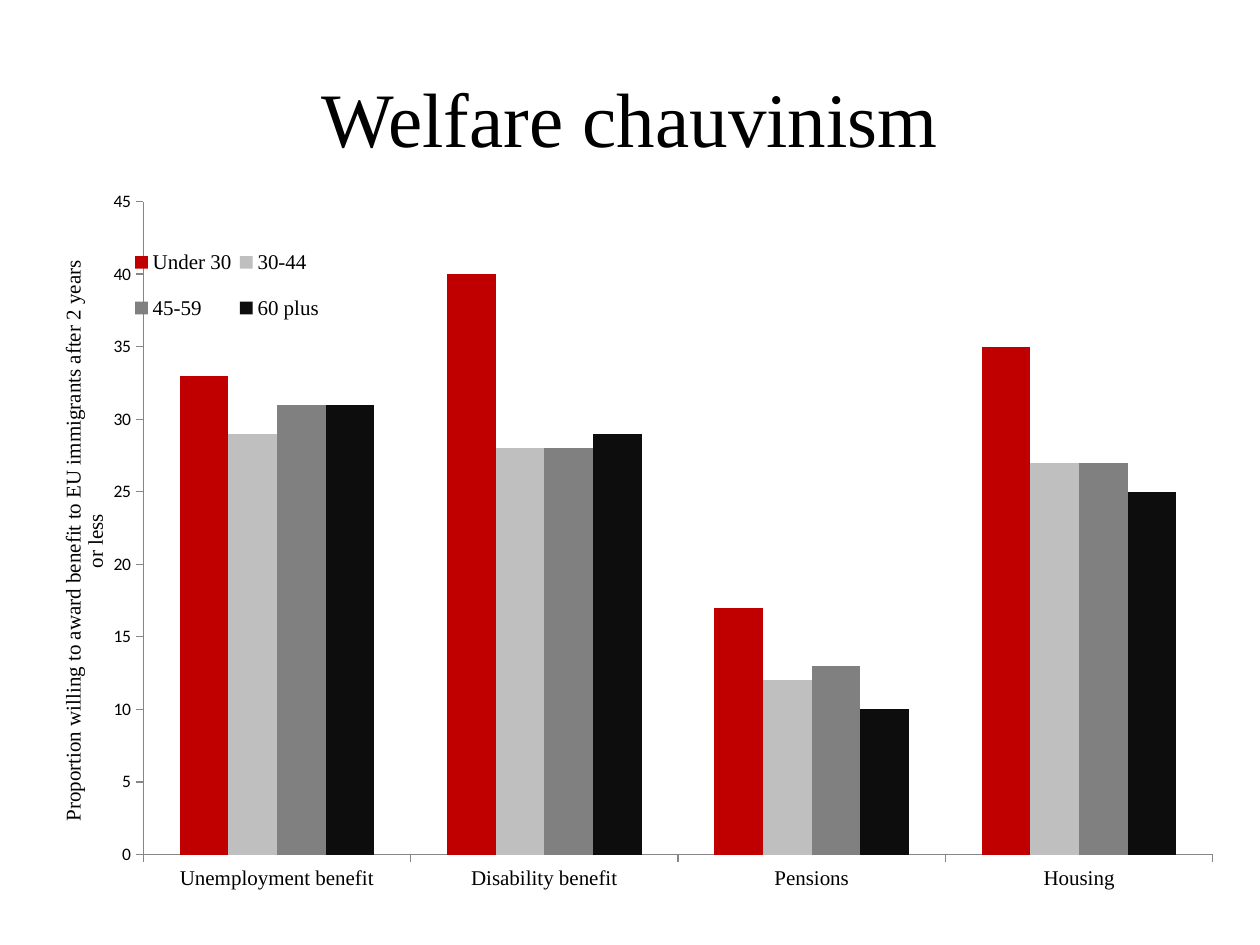
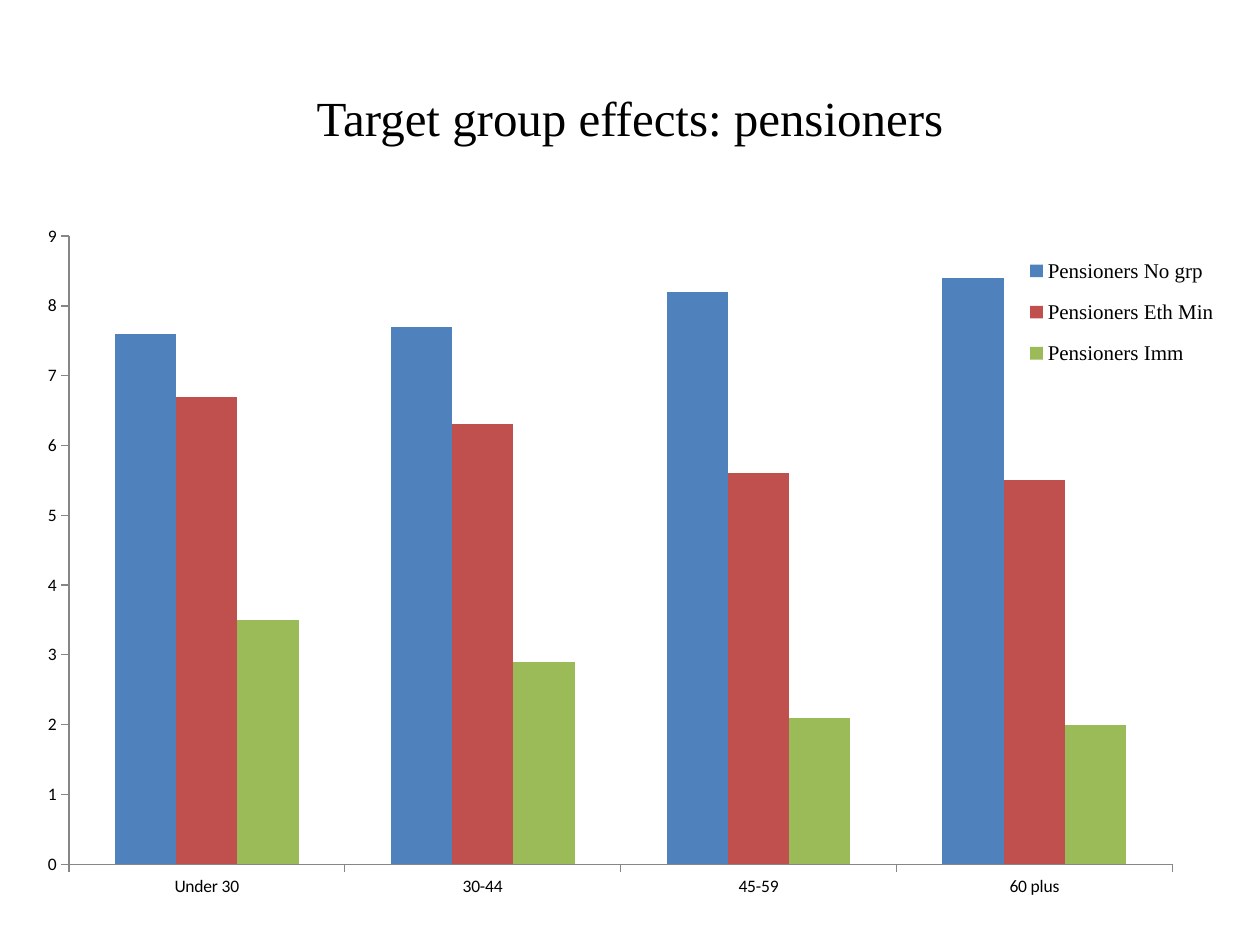
"""Build two slides of clustered column charts about welfare attitudes."""
from lxml.etree import SubElement
from pptx import Presentation
from pptx.chart.data import CategoryChartData
from pptx.dml.color import RGBColor
from pptx.enum.chart import XL_CHART_TYPE as ChartType
from pptx.enum.chart import XL_LEGEND_POSITION as LegendPosition
from pptx.enum.chart import XL_TICK_MARK as TickMark
from pptx.enum.text import MSO_ANCHOR as Anchor
from pptx.enum.text import PP_ALIGN as Align
from pptx.oxml.ns import qn
from pptx.util import Inches, Pt

BLACK = RGBColor(0x00, 0x00, 0x00)
AXIS_GREY = RGBColor(0x86, 0x86, 0x86)
DARK_RED = RGBColor(0xC0, 0x00, 0x00)
LIGHT_GREY = RGBColor(0xBF, 0xBF, 0xBF)
MID_GREY = RGBColor(0x80, 0x80, 0x80)
NEAR_BLACK = RGBColor(0x0D, 0x0D, 0x0D)
BLUE = RGBColor(0x4F, 0x81, 0xBD)
RED = RGBColor(0xC0, 0x50, 0x4D)
GREEN = RGBColor(0x9B, 0xBB, 0x59)

SERIF = "Times New Roman"
CHART_TEXT = {"name": "Calibri", "size": Pt(10), "bold": False}
LABEL_TEXT = {"name": SERIF, "size": Pt(12), "bold": False}
AXIS_FORMAT = {
    "major_tick_mark": TickMark.OUTSIDE,
    "minor_tick_mark": TickMark.NONE,
    "has_major_gridlines": False,
}
TITLE_BOX = (0.5, 0.3, 9, 1.25)
AGE_GROUPS = ["Under 30", "30-44", "45-59", "60 plus"]
BENEFITS = ["Unemployment benefit", "Disability benefit", "Pensions", "Housing"]
BENEFIT_SERIES = [
    (AGE_GROUPS[0], (33, 40, 17, 35), DARK_RED),
    (AGE_GROUPS[1], (29, 28, 12, 27), LIGHT_GREY),
    (AGE_GROUPS[2], (31, 28, 13, 27), MID_GREY),
    (AGE_GROUPS[3], (31, 29, 10, 25), NEAR_BLACK),
]
PENSIONER_SERIES = [
    ("Pensioners No grp", (7.6, 7.7, 8.2, 8.4), BLUE),
    ("Pensioners Eth Min", (6.7, 6.3, 5.6, 5.5), RED),
    ("Pensioners Imm", (3.5, 2.9, 2.1, 2), GREEN),
]


def set_format(target, values):
    """Set each named attribute of the target."""
    for name, value in values.items():
        setattr(target, name, value)


def set_font(font, values):
    """Apply font values in black."""
    set_format(font, values)
    font.color.rgb = BLACK


def set_layout(element, index, fractions, inner=False):
    """Place a chart part at fractions (x, y and maybe w, h) of the chart."""
    for old in element.findall(qn("c:layout")):
        element.remove(old)
    layout = SubElement(element, qn("c:layout"))
    element.insert(index, layout)
    manual = SubElement(layout, qn("c:manualLayout"))
    sides = "xywh"[:len(fractions)]
    settings = [("layoutTarget", "inner")] if inner else []
    settings += [(f"{side}Mode", "edge") for side in sides if side in "xy"]
    settings += zip(sides, fractions)
    for name, value in settings:
        SubElement(manual, qn(f"c:{name}")).set("val", str(value))


def add_titled_slide(deck, title, size):
    """Add a slide with a centred serif title."""
    page = deck.slides.add_slide(deck.slide_layouts[5])
    box = page.shapes.title
    names = ("left", "top", "width", "height")
    set_format(box, dict(zip(names, map(Inches, TITLE_BOX))))
    box.text_frame.text = title
    box.text_frame.vertical_anchor = Anchor.MIDDLE
    para = box.text_frame.paragraphs[0]
    para.alignment = Align.CENTER
    set_font(para.runs[0].font, {"name": SERIF, "size": Pt(size)})
    return page


def add_columns(page, place, categories, series_list, plot_area, top, step):
    """Add a clustered column chart with coloured series and plain axes."""
    data = CategoryChartData()
    data.categories = categories
    for name, values, _ in series_list:
        data.add_series(name, values)
    frame = page.shapes.add_chart(
        ChartType.COLUMN_CLUSTERED, *map(Inches, place), data)
    chart = frame.chart
    chart.has_title = False
    set_font(chart.font, CHART_TEXT)
    plot = chart.plots[0]
    set_format(plot, {"gap_width": 150, "overlap": 0, "vary_by_categories": False})
    for series, (_, _, color) in zip(plot.series, series_list):
        series.format.fill.solid()
        series.format.fill.fore_color.rgb = color
    for axis in (chart.category_axis, chart.value_axis):
        set_format(axis, AXIS_FORMAT)
        axis.format.line.color.rgb = AXIS_GREY
    set_format(chart.value_axis, {
        "minimum_scale": 0, "maximum_scale": top, "major_unit": step})
    set_layout(chart.element.xpath("//c:plotArea")[0], 0, plot_area, inner=True)
    return chart


def add_legend(chart, area):
    """Show the legend over the given part of the chart."""
    chart.has_legend = True
    set_format(chart.legend, {
        "position": LegendPosition.RIGHT, "include_in_layout": False})
    set_font(chart.legend.font, LABEL_TEXT)
    set_layout(chart.element.xpath("//c:legend")[0], 1, area)


def add_value_title(chart, text, corner):
    """Add an upright title beside the value axis."""
    frame = chart.value_axis.axis_title.text_frame
    frame.text = text
    set_font(frame.paragraphs[0].runs[0].font, LABEL_TEXT)
    title = chart.element.xpath("//c:valAx/c:title")[0]
    body = title.find(f".//{qn('a:bodyPr')}")
    body.set("rot", "-5400000")
    body.set("vert", "horz")
    set_layout(title, 1, corner)


def main():
    """Build and save the deck."""
    deck = Presentation()
    set_format(deck, {"slide_width": Inches(10), "slide_height": Inches(7.5)})

    page = add_titled_slide(deck, "Welfare chauvinism", 44)
    chart = add_columns(page, (0.35, 1.47, 9.37, 5.67), BENEFITS, BENEFIT_SERIES,
                        (0.084, 0.023, 0.906, 0.914), top=45, step=5)
    set_font(chart.category_axis.tick_labels.font, LABEL_TEXT)
    add_value_title(chart, "Proportion willing to award benefit to EU immigrants "
                    "after 2 years or less", (0.01, 0.1))
    add_legend(chart, (0.07, 0.06, 0.17, 0.16))

    page = add_titled_slide(deck, "Target group effects: pensioners", 28)
    chart = add_columns(page, (0.28, 1.75, 9.53, 5.39), AGE_GROUPS, PENSIONER_SERIES,
                        (0.028, 0.023, 0.919, 0.925), top=9, step=1)
    add_legend(chart, (0.82, 0.03, 0.17, 0.21))

    deck.save("out.pptx")


if __name__ == "__main__":
    main()
